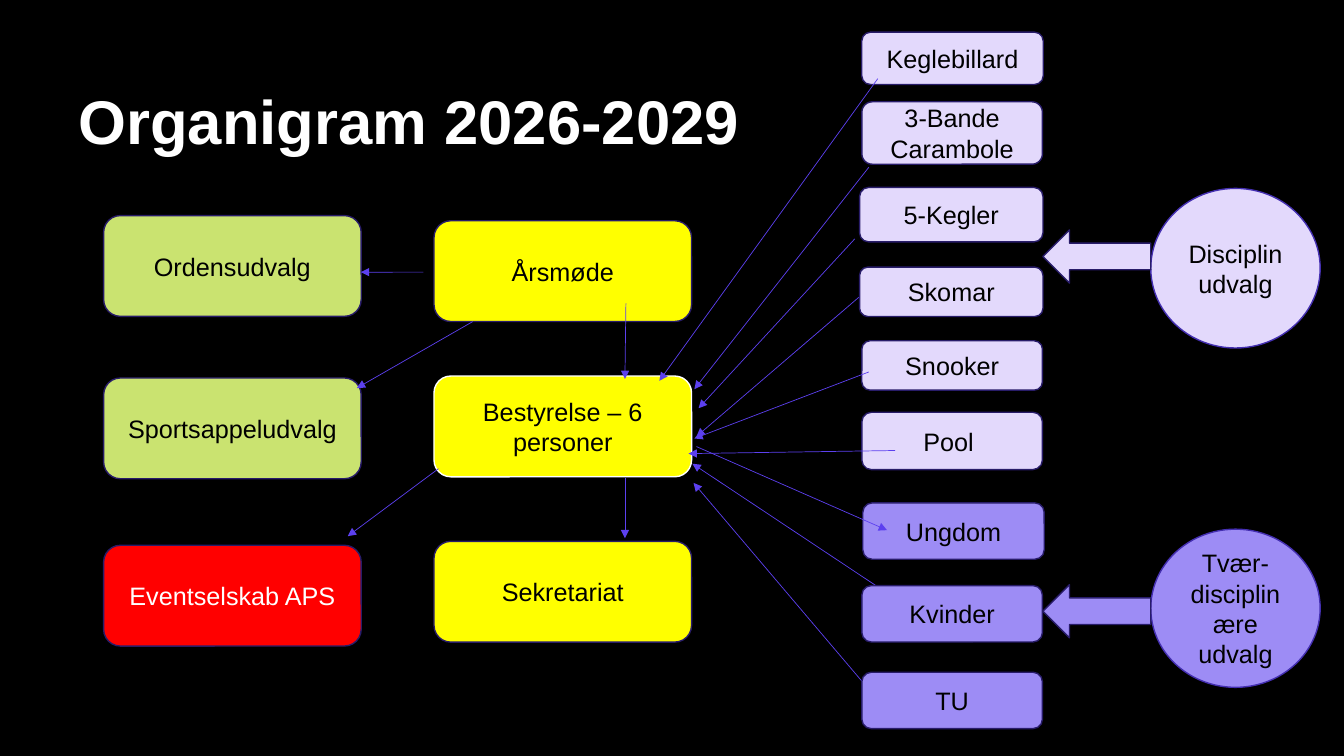
from collections import namedtuple
from dataclasses import dataclass

from lxml.etree import SubElement
from pptx import Presentation
from pptx.dml.color import RGBColor as RGB
from pptx.enum.shapes import MSO_CONNECTOR as Conn, MSO_SHAPE as Form
from pptx.enum.text import MSO_ANCHOR as Anchor, PP_ALIGN as Align
from pptx.oxml.ns import qn
from pptx.util import Pt

Box = namedtuple("Box", "x y w h")


@dataclass(frozen=True)
class Theme:
    font: str = "Arial"
    head: int = 44
    body: int = 18
    black: str = "000000"
    white: str = "FFFFFF"
    yellow: str = "FFFF00"
    green: str = "CAE370"
    red: str = "FF0000"
    pale: str = "E3D9FC"
    violet: str = "9D8CF5"
    edge: str = "281C69"
    ring: str = "442FB1"
    link: str = "5C40EF"


T = Theme()


def color(code):
    return RGB.from_string(code)


def write(par, text, size, ink, bold=False):
    run = par.add_run()
    run.text = text
    font = run.font
    font.name, font.size, font.bold = T.font, Pt(size), bold
    font.color.rgb = color(ink)


def node(slide, form, box, fill, text="", ink=T.black, edge=T.edge):
    """Draw one filled shape, with a centred label if it has one."""
    shape = slide.shapes.add_shape(form, *map(Pt, box))
    shape.shadow.inherit = False
    shape.fill.solid()
    shape.fill.fore_color.rgb = color(fill)
    shape.line.color.rgb = color(edge)
    shape.line.width = Pt(1)
    if text:
        frame = shape.text_frame
        frame.word_wrap = True
        frame.vertical_anchor = Anchor.MIDDLE
        par = frame.paragraphs[0]
        par.alignment = Align.CENTER
        write(par, text, T.body, ink)


def title(slide, box, text):
    frame = slide.shapes.add_textbox(*map(Pt, box)).text_frame
    frame.word_wrap = True
    frame.vertical_anchor = Anchor.BOTTOM
    par = frame.paragraphs[0]
    par.line_spacing = 0.9
    write(par, text, T.head, T.white, True)


def units(slide, box, items):
    """Stack large boxes; each item is top, label, fill, ink and edge."""
    for top, text, fill, ink, edge in items:
        place = Box(box.x, box.y + top, box.w, 72)
        node(slide, Form.ROUNDED_RECTANGLE, place, fill, text, ink, edge)


def panels(slide, box, fill, items):
    """Stack small boxes; each item is left, top, width, height and label."""
    for left, top, wide, high, text in items:
        place = Box(box.x + left, box.y + top, wide, high)
        node(slide, Form.ROUNDED_RECTANGLE, place, fill, text)


def group(slide, box, fill, text, drop):
    """Draw a circle with a block arrow leading left from it."""
    node(slide, Form.OVAL, box, fill, text, edge=T.ring)
    arrow = Box(box.x - 77, box.y + drop, 77, 38)
    node(slide, Form.LEFT_ARROW, arrow, fill)


def links(slide, start, end, pairs):
    """Draw arrows whose ends are offsets from the two boxes."""
    for x1, y1, x2, y2 in pairs:
        line = slide.shapes.add_connector(
            Conn.STRAIGHT, Pt(start.x + x1), Pt(start.y + y1),
            Pt(end.x + x2), Pt(end.y + y2))
        line.line.color.rgb = color(T.link)
        line.line.width = Pt(0.5)
        SubElement(line.line._get_or_add_ln(), qn("a:tailEnd"), type="triangle")
        SubElement(line._element.spPr, qn("a:effectLst"))


def chart(slide):
    side = Box(74, 154, 184, 308)
    core = Box(310, 157.7, 184, 301)
    board = Box(310, 268.6, 184, 72)
    games = Box(614, 23, 131, 313)
    cross = Box(614, 359.2, 131, 162)

    title(slide, Box(49, 3.6, 784, 113), "Organigram 2026-2029")
    units(slide, core, [
        (0, "Årsmøde", T.yellow, T.black, T.edge),
        (110.9, "Bestyrelse – 6 personer", T.yellow, T.black, T.white),
        (229, "Sekretariat", T.yellow, T.black, T.edge)])
    units(slide, side, [
        (0, "Ordensudvalg", T.green, T.black, T.edge),
        (116, "Sportsappeludvalg", T.green, T.black, T.edge),
        (235.5, "Eventselskab APS", T.red, T.white, T.edge)])
    panels(slide, games, T.pale, [
        (1.6, 0, 129.6, 37.4, "Keglebillard"),
        (1.6, 49.7, 129, 44.6, "3-Bande Carambole"),
        (0, 110.9, 131, 38.9, "5-Kegler"),
        (0, 167.8, 131, 35.3, "Skomar"),
        (1.6, 220.4, 129, 35.3, "Snooker"),
        (1.6, 271.5, 129, 41, "Pool ")])
    links(slide, games, board, [
        (13, 33.2, 161, 3.4), (6.6, 96.5, 186, 9.4),
        (-3.4, 147.6, 189, 23), (-0.6, 189.4, 187.5, 43.2),
        (6.6, 242.7, 186, 44.6), (25.4, 298.8, 181.8, 55.4)])
    links(slide, cross, board, [
        (22.5, 66.3, 184.6, 62.6), (18.9, 147.7, 185.4, 76.3)])
    links(slide, core, side, [
        (-7.6, 36.7, 183.8, 40.4), (27.7, 72, 180.9, 123.2),
        (3.2, 177.1, 174.4, 229)])
    links(slide, core, core, [
        (137.1, 59, 136.4, 113), (136.4, 183.6, 136.4, 226.8)])
    panels(slide, cross, T.violet, [
        (2.3, 0, 129.6, 40.3, "Ungdom"),
        (1.6, 59.1, 129, 40.3, "Kvinder"),
        (1.6, 121, 129, 40.3, "TU")])
    links(slide, board, cross, [(187.5, 50.4, 19.6, 19.5)])
    group(slide, Box(822, 134.6, 121, 114), T.pale, "Disciplinudvalg", 29.6)
    group(slide, Box(822, 378, 121, 113), T.violet,
          "Tvær-disciplinære udvalg", 39.6)


def main():
    deck = Presentation()
    deck.slide_width, deck.slide_height = Pt(960), Pt(540)
    slide = deck.slides.add_slide(deck.slide_layouts[6])
    back = slide.background.fill
    back.solid()
    back.fore_color.rgb = color(T.black)
    chart(slide)
    deck.save("out.pptx")


if __name__ == "__main__":
    main()
